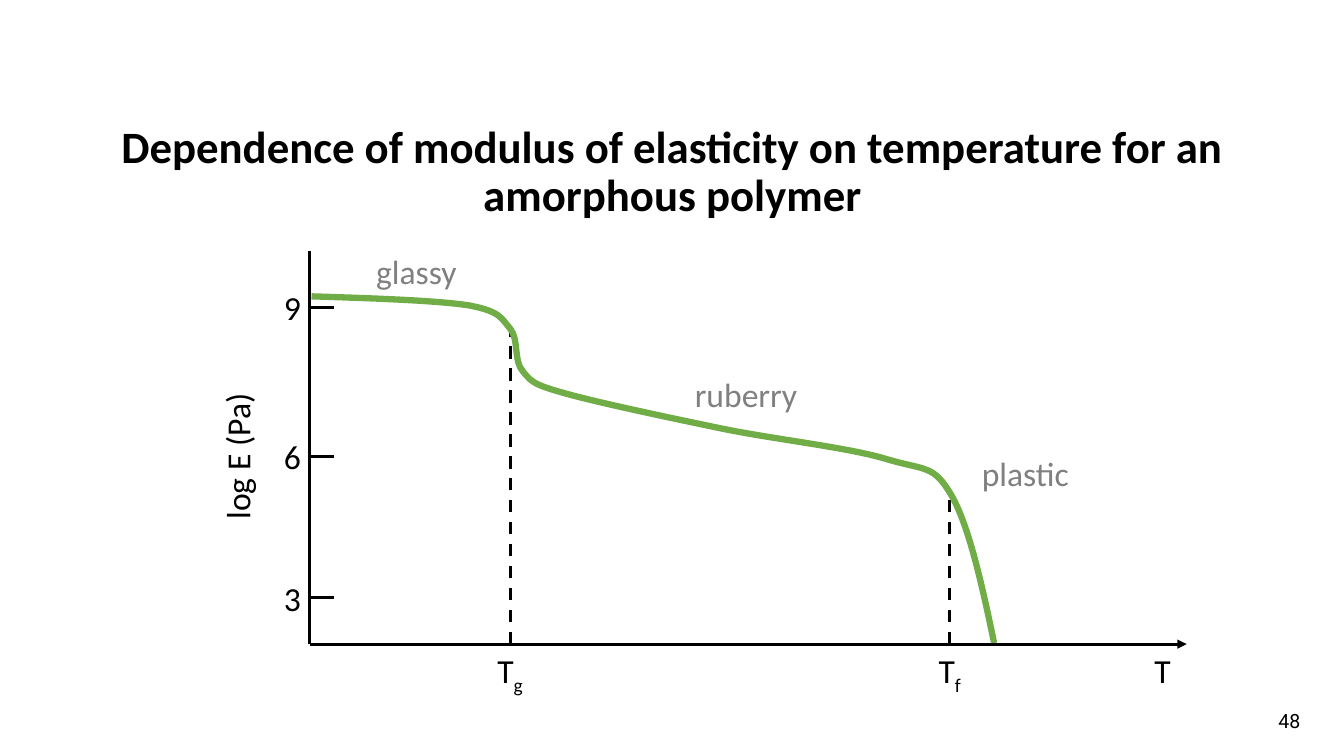
from lxml import etree
from pptx import Presentation
from pptx.dml.color import RGBColor
from pptx.enum.dml import MSO_LINE
from pptx.enum.shapes import MSO_CONNECTOR
from pptx.enum.text import MSO_ANCHOR, PP_ALIGN
from pptx.oxml.ns import qn
from pptx.util import Pt

STRAIGHT = MSO_CONNECTOR.STRAIGHT
DASH = MSO_LINE.DASH
CENTER = PP_ALIGN.CENTER
TOP, MIDDLE = MSO_ANCHOR.TOP, MSO_ANCHOR.MIDDLE
PX = 9144  # 100 px to the inch

COLORS = {"ink": "000000", "region": "808080", "curve": "70AD47"}

# Content
TITLE = "Dependence of modulus of elasticity on temperature for an amorphous polymer"
TITLE_BOX = (92, 99, 1150, 145)
PAGE_NUMBER = "48"
PAGE_NUMBER_BOX = (1251, 695, 56, 40)
Y_TITLE = "log E (Pa)"
Y_TITLE_BOX = (66, 428, 338, 50)
ORIGIN_X, ORIGIN_Y = 307, 639
AXIS_TOP, AXIS_RIGHT = 249, 1177
TICKS = [("9", 305), ("6", 453), ("3", 593)]
TICK_LENGTH = 24
REGIONS = [  # text, centre x, top
    ("glassy", 413, 244),
    ("ruberry", 740, 366),
    ("plastic", 1017, 444),
]
TRANSITIONS = [("g", 506, 326), ("f", 942, 485)]  # subscript, x, top of dashes
X_TITLE = ("T", 1153)
CURVE_START = (309, 294)
CURVE = [  # two control points and an end point per segment
    ((370, 296), (432, 298), (465, 303)),
    ((497, 309), (497, 316), (506, 326)),
    ((515, 337), (509, 358), (519, 369)),
    ((528, 380), (531, 382), (563, 391)),
    ((596, 400), (662, 414), (715, 425)),
    ((768, 436), (843, 444), (881, 456)),
    ((919, 467), (926, 461), (944, 492)),
    ((961, 522), (974, 580), (986, 638)),
]
LABEL_HEIGHT = 50

deck = Presentation()
deck.slide_width, deck.slide_height = 1333 * PX, 750 * PX
page = deck.slides.add_slide(deck.slide_layouts[5])


def write(box, text, size=24, color="ink", font="Calibri", bold=False,
          subscript="", anchor=TOP, spacing=None):
    frame = box.text_frame
    frame.word_wrap = True
    frame.vertical_anchor = anchor
    para = frame.paragraphs[0]
    para.alignment = CENTER
    para.line_spacing = spacing
    for part in filter(None, (text, subscript)):
        span = para.add_run()
        span.text = part
        span.font.size = Pt(size)
        span.font.name = font
        span.font.bold = bold
        span.font.color.rgb = RGBColor.from_string(COLORS[color])
    if subscript:
        span.font._element.set("baseline", "-25000")


def place(box, bounds):
    box.left, box.top, box.width, box.height = (value * PX for value in bounds)


def add_label(text, bounds, **style):
    box = page.shapes.add_textbox(*(value * PX for value in bounds))
    box.text_frame.margin_left = box.text_frame.margin_right = 0
    write(box, text, **style)
    return box


def add_label_at(text, center, top, width, **style):
    add_label(text, (center - width // 2, top, width, LABEL_HEIGHT), **style)


def add_line(x1, y1, x2, y2, dash=None, arrow=False):
    line = page.shapes.add_connector(STRAIGHT, x1 * PX, y1 * PX, x2 * PX, y2 * PX)
    line.line.width = Pt(2.25)
    line.line.color.rgb = RGBColor.from_string(COLORS["ink"])
    if dash:
        line.line.dash_style = dash
    if arrow:
        etree.SubElement(line.line._get_or_add_ln(), qn("a:tailEnd"), type="triangle")
    etree.SubElement(line._element.spPr, qn("a:effectLst"))


# Title and page number
place(page.shapes.title, TITLE_BOX)
write(page.shapes.title, TITLE, size=32, bold=True, anchor=MIDDLE, spacing=0.9)
add_label(PAGE_NUMBER, PAGE_NUMBER_BOX, size=14, font="Roboto", anchor=MIDDLE)

# Transition temperatures
for subscript, x, top in TRANSITIONS:
    add_line(x, ORIGIN_Y, x, top, dash=DASH)
    add_label_at("T", x, ORIGIN_Y + 1, 46, subscript=subscript)

# Modulus curve: straight segments turned into Bezier segments
builder = page.shapes.build_freeform(*CURVE_START, scale=PX)
builder.add_line_segments([segment[-1] for segment in CURVE], close=False)
curve = builder.convert_to_shape()
curve.shadow.inherit = False
curve.fill.background()
curve.line.width = Pt(4.5)
curve.line.color.rgb = RGBColor.from_string(COLORS["curve"])
for straight, segment in zip(list(curve._element.iter(qn("a:lnTo"))), CURVE):
    bend = etree.Element(qn("a:cubicBezTo"))
    for x, y in segment:
        etree.SubElement(bend, qn("a:pt"), x=str(x - CURVE_START[0]),
                         y=str(y - CURVE_START[1]))
    straight.getparent().replace(straight, bend)

# Axes, ticks and axis titles
add_line(ORIGIN_X, ORIGIN_Y, ORIGIN_X, AXIS_TOP)
add_line(ORIGIN_X, ORIGIN_Y, AXIS_RIGHT, ORIGIN_Y, arrow=True)
for text, y in TICKS:
    add_line(ORIGIN_X, y, ORIGIN_X + TICK_LENGTH, y)
    add_label_at(text, ORIGIN_X - 17, y - LABEL_HEIGHT // 2, 36)
add_label(Y_TITLE, Y_TITLE_BOX).rotation = 270
add_label_at(X_TITLE[0], X_TITLE[1], ORIGIN_Y + 1, 46)

# Regions of behaviour
for text, center, top in REGIONS:
    add_label_at(text, center, top, 144, color="region")

deck.save("out.pptx")
